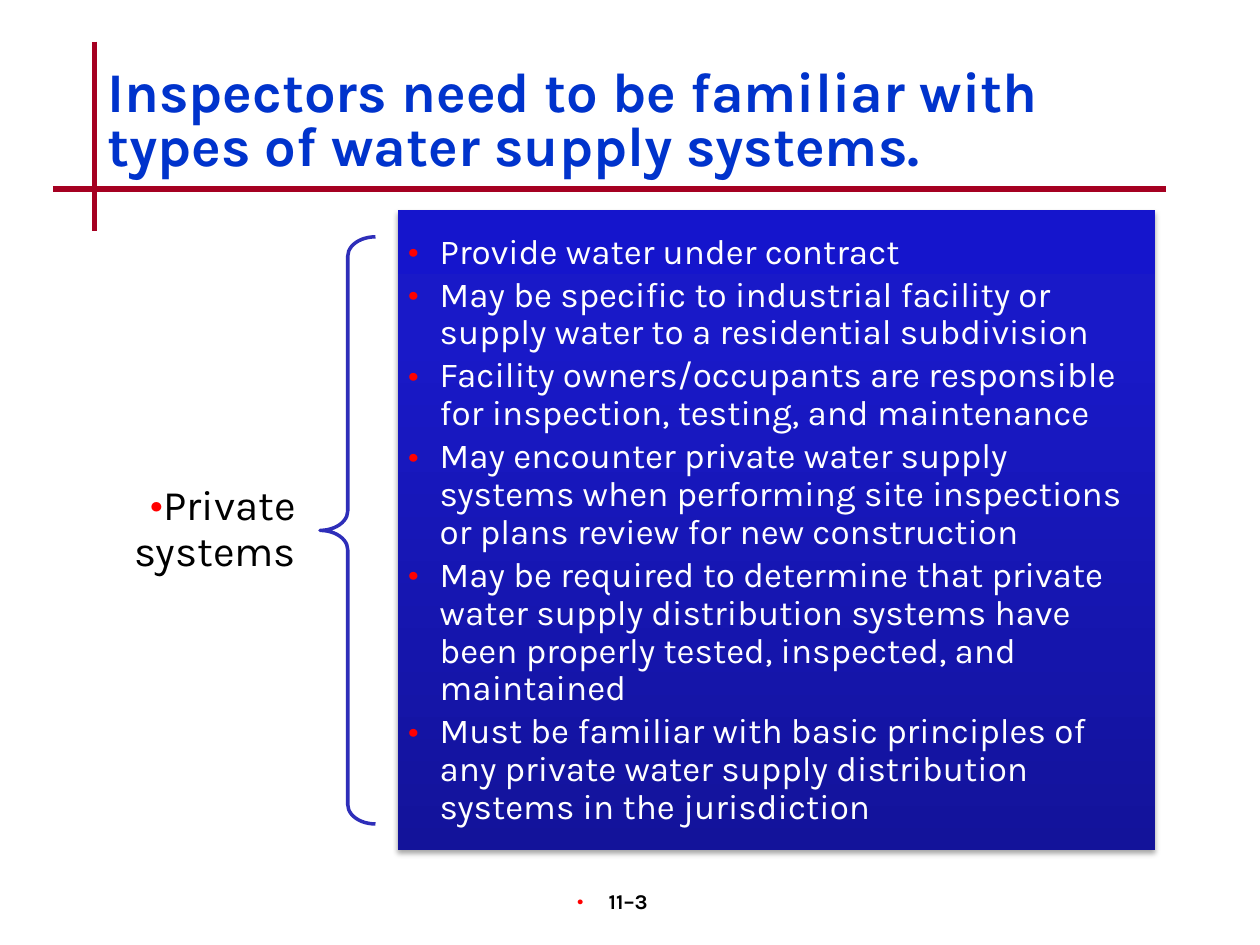
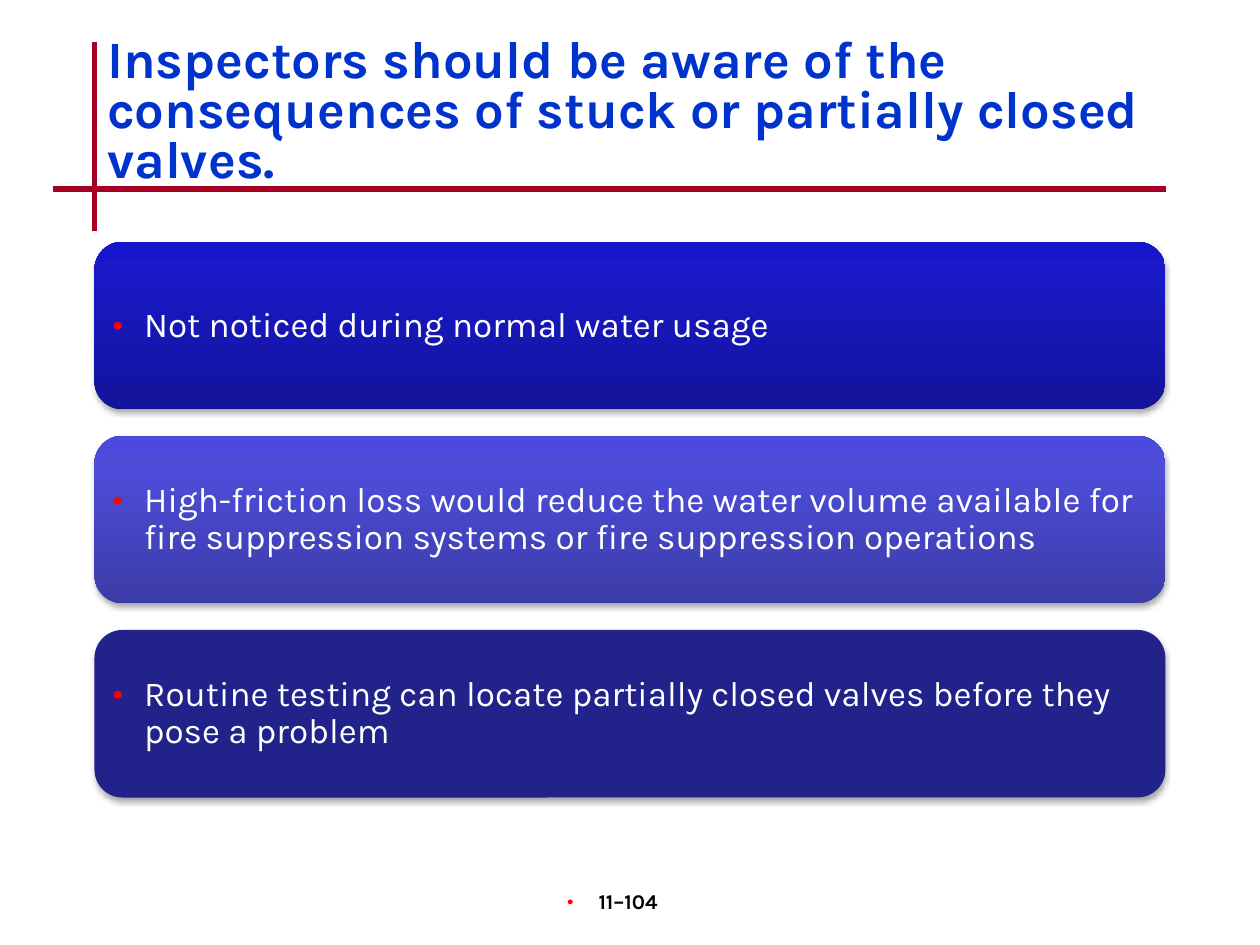
"""Build two slides on water supply systems and closed valves."""
import copy

import pptx
import pptx.dml.color
import pptx.enum.shapes
import pptx.enum.text
import pptx.oxml.ns
import pptx.util
from lxml import etree

EMU_PER_PX = 9144
ALIGN = pptx.enum.text.PP_ALIGN
ANCHOR = pptx.enum.text.MSO_ANCHOR
SHAPE = pptx.enum.shapes.MSO_SHAPE
qn = pptx.oxml.ns.qn

DEEP_BLUE = [("13139A", 0), ("1919C8", 0.8), ("1515CC", 1)]
SOFT_BLUE = [("3B3BA8", 0), ("4D4DDA", 0.8), ("4A4ADE", 1)]
NAVY = "22228B"


def px(length):
    return pptx.util.Emu(length * EMU_PER_PX)


def rgb(color):
    return pptx.dml.color.RGBColor.from_string(color)


def add_node(parent, tag, **attributes):
    node = etree.SubElement(parent, qn(tag))
    for key, value in attributes.items():
        node.set(key, str(value))
    return node


class Deck:
    font = "Karla"
    title_color = "0033CC"
    rule_color = "A50021"
    bullet_color = "FF0000"
    brace_color = "2E2EB9"

    def __init__(self):
        self.presentation = pptx.Presentation()
        self.presentation.slide_width = px(1000)
        self.presentation.slide_height = px(750)
        self.slide = None

    def start(self, layout, title, top, size, page):
        self.slide = self.presentation.slides.add_slide(
            self.presentation.slide_layouts[layout])
        self.rule(75, 33, 75, 183)
        self.rule(42, 150, 925, 150)
        self.page_number(page)
        heading = self.slide.shapes.title
        self.place(heading, 75, top, 850, 100)
        self.set_text(heading, [title], size, self.title_color, bold=True,
                      spacing=0.8, anchor=ANCHOR.TOP, insets=(10, 5, 10, 5))

    def place(self, shape, left, top, width, height):
        shape.left, shape.top = px(left), px(top)
        shape.width, shape.height = px(width), px(height)

    def rule(self, x1, y1, x2, y2):
        rule = self.slide.shapes.add_connector(
            pptx.enum.shapes.MSO_CONNECTOR.STRAIGHT, px(x1), px(y1), px(x2), px(y2))
        rule.line.color.rgb = rgb(self.rule_color)
        rule.line.width = pptx.util.Pt(3)
        add_node(rule._element.spPr, "a:effectLst")

    def page_number(self, page):
        footer = self.slide.shapes.add_textbox(px(392), px(700), px(208), px(50))
        self.set_text(footer, [page], 12, "000000", bold=True, align=ALIGN.CENTER,
                      anchor=ANCHOR.TOP, insets=(0, 5, 20, 5), spacing=1, hang=25)

    def bullet(self, paragraph, hang):
        properties = paragraph._p.get_or_add_pPr()
        properties.set("marL", str(px(hang)))
        properties.set("indent", str(px(-hang)))
        color = add_node(properties, "a:buClr")
        add_node(color, "a:srgbClr", val=self.bullet_color)
        add_node(properties, "a:buSzPct", val=110000)
        add_node(properties, "a:buFont", typeface=self.font)
        add_node(properties, "a:buChar", char="•")

    def set_text(self, shape, lines, size, color, bold=False, align=ALIGN.LEFT,
                 anchor=ANCHOR.MIDDLE, insets=(8, 8, 8, 8), spacing=0.9,
                 after=0, hang=None):
        frame = shape.text_frame
        frame.text = "\n".join(lines)
        frame.word_wrap = True
        frame.auto_size = pptx.enum.text.MSO_AUTO_SIZE.NONE
        frame.vertical_anchor = anchor
        frame.margin_left, frame.margin_top, frame.margin_right, frame.margin_bottom = map(px, insets)
        for paragraph in frame.paragraphs:
            if hang is not None:
                self.bullet(paragraph, hang)
            paragraph.alignment = align
            paragraph.line_spacing = spacing
            paragraph.space_before = pptx.util.Pt(0)
            paragraph.space_after = pptx.util.Pt(after)
            for run in paragraph.runs:
                run.font.name = self.font
                run.font.size = pptx.util.Pt(size)
                run.font.bold = bold
                run.font.color.rgb = rgb(color)

    def paint(self, shape, fill):
        if isinstance(fill, str):
            shape.fill.solid()
            shape.fill.fore_color.rgb = rgb(fill)
        else:
            shape.fill.gradient()
            shape.fill.gradient_angle = 90
            stops = shape._element.spPr.find(".//" + qn("a:gsLst"))
            stops.insert(1, copy.deepcopy(stops[0]))
            for stop, (color, position) in zip(shape.fill.gradient_stops, fill):
                stop.color.rgb = rgb(color)
                stop.position = position
        shape.line.fill.background()
        self.cast_shadow(shape)

    def cast_shadow(self, shape):
        shape.shadow.inherit = False
        effects = shape._element.spPr.find(qn("a:effectLst"))
        shadow = add_node(effects, "a:outerShdw", blurRad=pptx.util.Pt(3.1),
                          dist=pptx.util.Pt(1.8), dir=5400000, rotWithShape=0)
        add_node(add_node(shadow, "a:srgbClr", val="000000"), "a:alpha", val=35000)

    def list_panel(self, left, top, width, height, points):
        panel = self.slide.placeholders[1]
        self.place(panel, left, top, width, height)
        self.paint(panel, DEEP_BLUE)
        self.set_text(panel, points, 20, "FFFFFF", after=3, hang=25)

    def card(self, left, top, width, height, fill, point):
        card = self.slide.shapes.add_shape(
            SHAPE.ROUNDED_RECTANGLE, px(left), px(top), px(width), px(height))
        self.paint(card, fill)
        self.set_text(card, [point], 20, "FFFFFF", hang=25)

    def label(self, left, top, width, height, topic):
        label = self.slide.shapes.add_textbox(px(left), px(top), px(width), px(height))
        self.set_text(label, [topic], 24, "000000", align=ALIGN.RIGHT,
                      insets=(19, 7, 19, 7), hang=0)

    def brace(self, left, top, width, height):
        brace = self.slide.shapes.add_shape(
            SHAPE.LEFT_BRACE, px(left), px(top), px(width), px(height))
        brace.adjustments[0] = 0.35
        brace.fill.background()
        brace.line.color.rgb = rgb(self.brace_color)
        brace.line.width = pptx.util.Pt(2)
        brace.shadow.inherit = False


def main():
    deck = Deck()

    deck.start(1, "Inspectors need to be familiar with types of water supply systems.",
               50, 32, "11–3")
    deck.label(33, 350, 221, 141, "Private systems")
    deck.brace(254, 188, 44, 466)
    deck.list_panel(316, 167, 601, 508, [
        "Provide water under contract",
        "May be specific to industrial facility or supply water to a residential subdivision",
        "Facility owners/occupants are responsible for inspection, testing, and maintenance",
        "May encounter private water supply systems when performing site inspections "
        "or plans review for new construction",
        "May be required to determine that private water supply distribution systems "
        "have been properly tested, inspected, and maintained",
        "Must be familiar with basic principles of any private water supply "
        "distribution systems in the jurisdiction",
    ])

    deck.start(5, "Inspectors should be aware of the consequences of stuck or "
               "partially closed valves.", 25, 30, "11–104")
    consequences = [
        (DEEP_BLUE, "Not noticed during normal water usage"),
        (SOFT_BLUE, "High-friction loss would reduce the water volume available for "
                    "fire suppression systems or fire suppression operations"),
        (NAVY, "Routine testing can locate partially closed valves before they pose a problem"),
    ]
    for index, (fill, consequence) in enumerate(consequences):
        deck.card(75, 192 + 154 * index, 850, 133, fill, consequence)

    deck.presentation.save("out.pptx")


if __name__ == "__main__":
    main()
